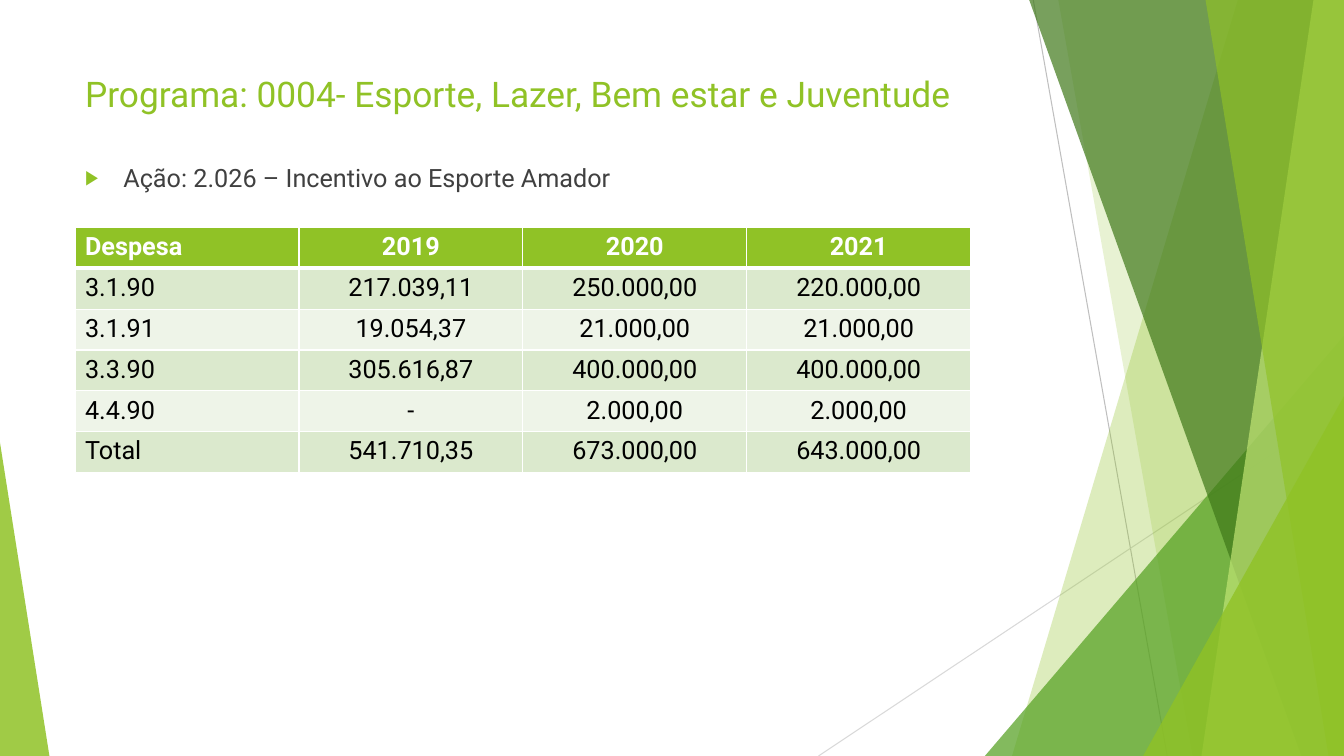
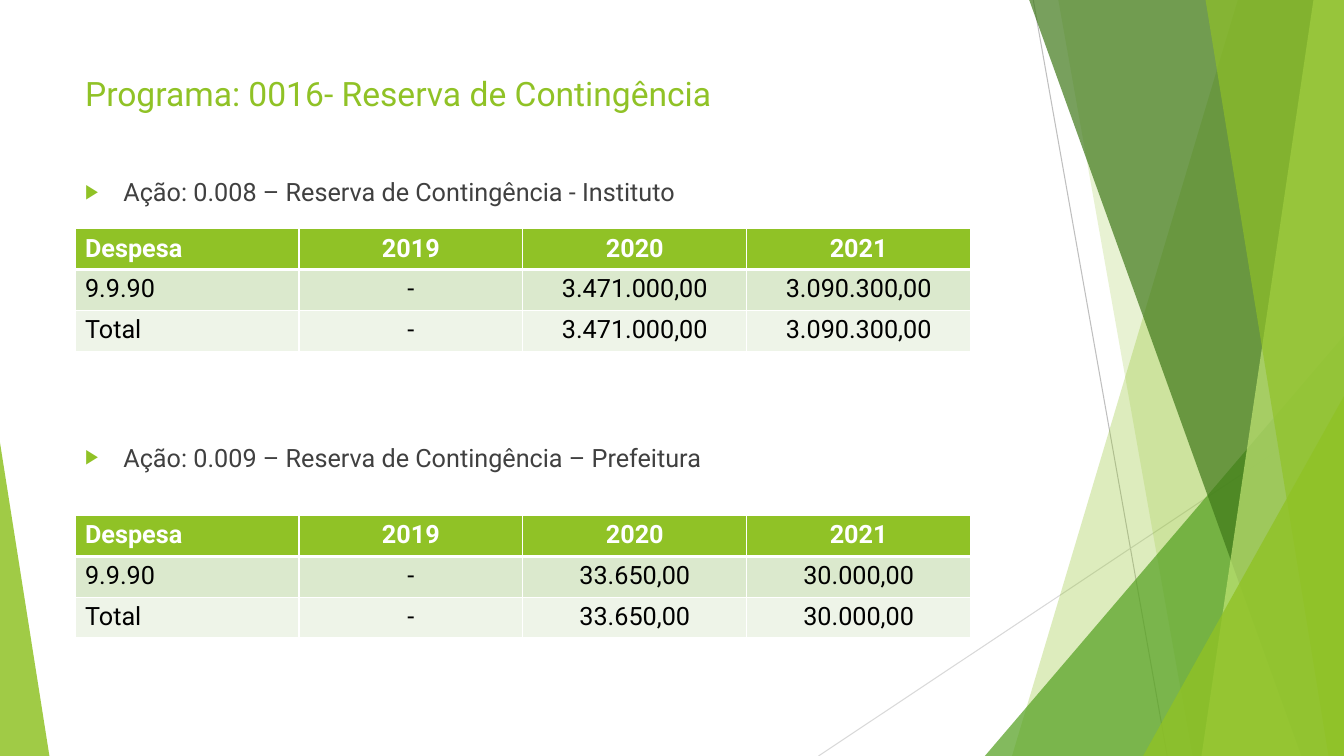
from lxml.etree import SubElement
from pptx import Presentation
from pptx.dml.color import RGBColor
from pptx.enum.shapes import MSO_CONNECTOR, MSO_SHAPE
from pptx.enum.text import MSO_ANCHOR, MSO_AUTO_SIZE, PP_ALIGN
from pptx.oxml.ns import qn
from pptx.util import Inches, Pt

COLORS = {
    "lime": "90C226",
    "pale_lime": "C0E474",
    "green": "54A021",
    "forest": "3F7819",
    "line_dark": "BFBFBF",
    "line_light": "D9D9D9",
    "body": "404040",
    "black": "000000",
    "white": "FFFFFF",
    "band_odd": "DBE9CD",
    "band_even": "EEF4E8",
}
FONT = "Roboto"
LEFT = 5.58
TEXT_WIDTH = 70.5
COLUMN_WIDTH = 16.66
ROW_HEIGHT = 5.4
HEADER = ("Despesa", "2019", "2020", "2021")


def color(name):
    return RGBColor.from_string(COLORS[name])


class BudgetDeck:
    def __init__(self):
        self.deck = Presentation()
        self.deck.slide_width = Inches(13.333)
        self.deck.slide_height = Inches(7.5)
        self.layout = self.deck.slide_layouts[1]
        self.page = None

    def x(self, percent):
        return round(self.deck.slide_width * percent / 100)

    def y(self, percent):
        return round(self.deck.slide_height * percent / 100)

    def new_page(self):
        self.page = self.deck.slides.add_slide(self.layout)

    def place(self, box, left, top, width, height):
        box.left, box.top = self.x(left), self.y(top)
        box.width, box.height = self.x(width), self.y(height)

    def tint(self, shape, name, opacity):
        shape.shadow.inherit = False
        shape.fill.solid()
        shape.fill.fore_color.rgb = color(name)
        tone = shape.element.spPr.find(".//" + qn("a:srgbClr"))
        SubElement(tone, qn("a:alpha"), val=str(opacity * 1000))
        shape.line.fill.background()
        return shape

    def thin_line(self, start, end, name):
        line = self.page.shapes.add_connector(
            MSO_CONNECTOR.STRAIGHT,
            self.x(start[0]), self.y(start[1]), self.x(end[0]), self.y(end[1]),
        )
        line.line.color.rgb = color(name)
        line.line.width = Pt(0.75)
        SubElement(line.element.spPr, qn("a:effectLst"))
        return line

    def wedge(self, top_x, bottom_x, name, opacity):
        builder = self.page.shapes.build_freeform(self.x(top_x), 0)
        corners = ((100, 0), (100, 100), (bottom_x, 100))
        builder.add_line_segments([(self.x(x), self.y(y)) for x, y in corners])
        return self.tint(builder.convert_to_shape(), name, opacity)

    def triangle(self, left, top, width, apex, name, opacity):
        shape = self.page.shapes.add_shape(
            MSO_SHAPE.ISOSCELES_TRIANGLE,
            self.x(left), self.y(top), self.x(width), self.y(100 - top),
        )
        shape.adjustments[0] = apex
        return self.tint(shape, name, opacity)

    def share_backdrop(self):
        shapes = (
            self.thin_line((76.88, 0), (86.85, 100), "line_dark"),
            self.thin_line((100, 53.73), (60.9, 100), "line_light"),
            self.wedge(92.1, 75.3, "lime", 30),
            self.wedge(78.75, 88.73, "lime", 20),
            self.triangle(73.28, 44.4, 26.72, 1, "green", 72),
            self.wedge(76.58, 96.83, "forest", 70),
            self.wedge(97.73, 89.4, "pale_lime", 70),
            self.wedge(89.7, 98.85, "lime", 65),
            self.triangle(85.05, 52.4, 14.95, 1, "lime", 80),
            self.triangle(0, 58.53, 3.68, 0, "lime", 85),
        )
        for shape in shapes:
            self.layout.shapes.element.append(shape.element)

    def add_span(self, para, text, size, name, bold=False):
        span = para.add_run()
        span.text = text
        span.font.name = FONT
        span.font.size = Pt(size)
        span.font.bold = bold
        span.font.color.rgb = color(name)

    def prepare(self, box):
        frame = box.text_frame
        frame.word_wrap = True
        frame.auto_size = MSO_AUTO_SIZE.NONE
        frame.vertical_anchor = MSO_ANCHOR.TOP
        return frame

    def title(self, text, size, height):
        box = self.page.shapes.title
        self.place(box, LEFT, 8.93, TEXT_WIDTH, height)
        para = self.prepare(box).paragraphs[0]
        para.alignment = PP_ALIGN.LEFT
        self.add_span(para, text, size, "lime")

    def actions(self, top, texts, gap=10):
        box = self.page.placeholders[1]
        self.place(box, LEFT, top, TEXT_WIDTH, 67.2)
        frame = self.prepare(box)
        for index, text in enumerate(texts):
            para = frame.add_paragraph() if index else frame.paragraphs[0]
            para.space_before = Pt(gap if index else 10)
            self.bullet(para)
            self.add_span(para, text, 18, "body")

    def bullet(self, para):
        properties = para._p.get_or_add_pPr()
        indent = Inches(0.38)
        properties.set("marL", str(indent))
        properties.set("indent", str(-indent))
        tone = SubElement(properties, qn("a:buClr"))
        SubElement(tone, qn("a:srgbClr"), val=COLORS["lime"])
        SubElement(properties, qn("a:buSzPct"), val="80000")
        SubElement(properties, qn("a:buFont"), typeface="Arial")
        SubElement(properties, qn("a:buChar"), char="▶")

    def borders(self, cell, bottom_width):
        properties = cell._tc.get_or_add_tcPr()
        sides = (("L", 1), ("R", 1), ("T", 1), ("B", bottom_width))
        for index, (side, width) in enumerate(sides):
            edge = SubElement(properties, qn("a:ln" + side), w=str(Pt(width)))
            fill = SubElement(edge, qn("a:solidFill"))
            SubElement(fill, qn("a:srgbClr"), val=COLORS["white"])
            properties.insert(index, edge)

    def table(self, top, rows):
        lines = (HEADER, *rows)
        table = self.page.shapes.add_table(
            len(lines), len(HEADER), self.x(LEFT), self.y(top),
            self.x(COLUMN_WIDTH * len(HEADER)), self.y(ROW_HEIGHT * len(lines)),
        ).table
        for row_index, values in enumerate(lines):
            is_header = row_index == 0
            band = "band_odd" if row_index % 2 else "band_even"
            for column_index, value in enumerate(values):
                cell = table.cell(row_index, column_index)
                cell.fill.solid()
                cell.fill.fore_color.rgb = color("lime" if is_header else band)
                self.borders(cell, 3 if is_header else 1)
                para = cell.text_frame.paragraphs[0]
                para.alignment = PP_ALIGN.CENTER if column_index else PP_ALIGN.LEFT
                self.add_span(para, value, 18, "white" if is_header else "black", is_header)


def main():
    budget = BudgetDeck()

    budget.new_page()
    budget.share_backdrop()
    budget.title("Programa: 0004- Esporte, Lazer, Bem estar e Juventude", 25.2, 9.87)
    budget.actions(20.8, ["Ação: 2.026 – Incentivo ao Esporte Amador"])
    budget.table(30.1, (
        ("3.1.90", "217.039,11", "250.000,00", "220.000,00"),
        ("3.1.91", "19.054,37", "21.000,00", "21.000,00"),
        ("3.3.90", "305.616,87", "400.000,00", "400.000,00"),
        ("4.4.90", "-", "2.000,00", "2.000,00"),
        ("Total", "541.710,35", "673.000,00", "643.000,00"),
    ))

    budget.new_page()
    budget.title("Programa: 0016- Reserva de Contingência", 24, 13.87)
    budget.actions(22.67, [
        "Ação: 0.008 – Reserva de Contingência - Instituto",
        "Ação: 0.009 – Reserva de Contingência – Prefeitura",
    ], gap=168)
    for top, amounts in (
        (30.27, ("-", "3.471.000,00", "3.090.300,00")),
        (68.2, ("-", "33.650,00", "30.000,00")),
    ):
        budget.table(top, [(label, *amounts) for label in ("9.9.90", "Total")])

    budget.deck.save("out.pptx")


if __name__ == "__main__":
    main()
